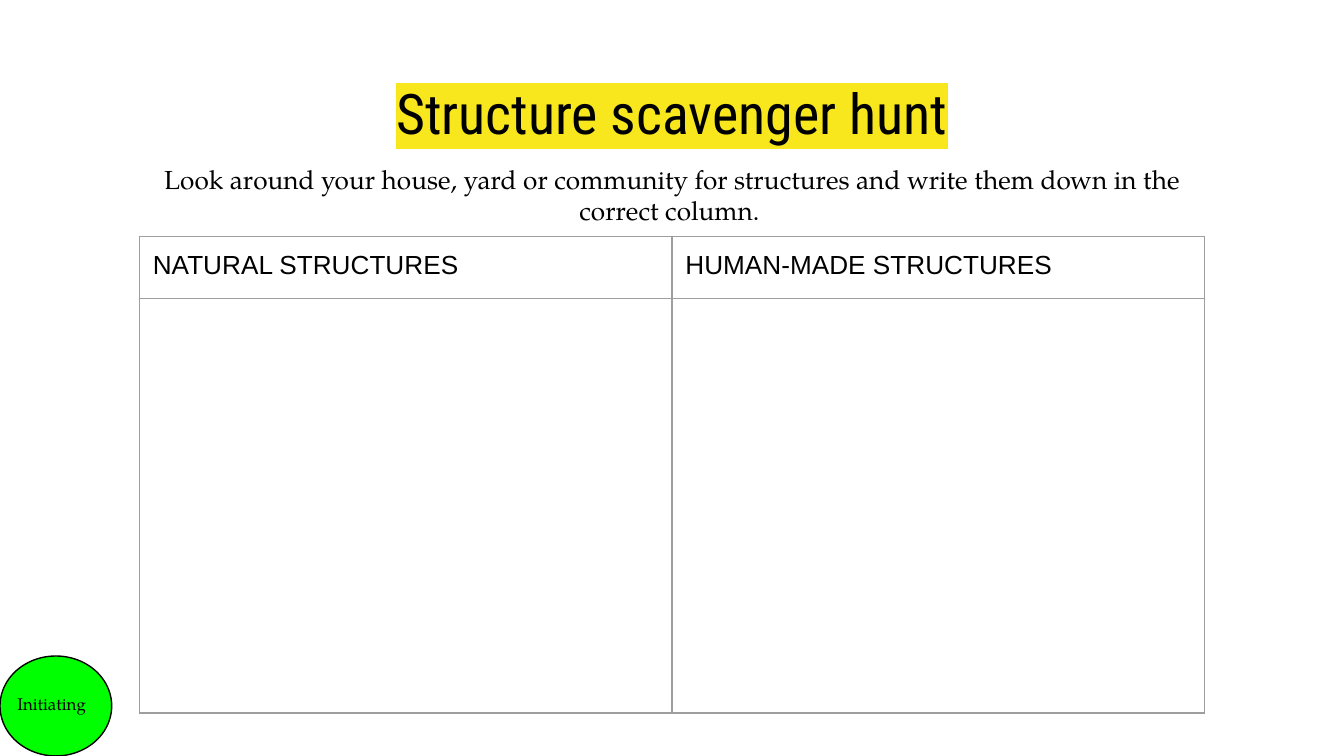
"""Build the structure scavenger hunt worksheet slide."""
from dataclasses import dataclass

from lxml.etree import SubElement
from pptx import Presentation
from pptx.dml.color import RGBColor
from pptx.enum.shapes import MSO_SHAPE as Shape
from pptx.enum.text import MSO_ANCHOR as Anchor, PP_ALIGN as Align
from pptx.oxml.ns import qn
from pptx.util import Pt

PX = 5715
SLIDE_W, SLIDE_H = 1600, 900
INSET = 16
BLACK = RGBColor(0x00, 0x00, 0x00)
GREEN = RGBColor(0x00, 0xFF, 0x00)
GREY = RGBColor(0x9E, 0x9E, 0x9E)
YELLOW = RGBColor(0xF8, 0xE7, 0x1C)
SERIF = "TeX Gyre Pagella"
HEADERS = ("NATURAL STRUCTURES", "HUMAN-MADE STRUCTURES")
ROW_HEIGHTS = (73, 494)


@dataclass(frozen=True)
class Box:
    x: int
    y: int
    w: int
    h: int

    def emu(self) -> tuple[int, ...]:
        return tuple(v * PX for v in (self.x, self.y, self.w, self.h))


@dataclass(frozen=True)
class Label:
    box: Box
    text: str
    size: int
    font: str = SERIF
    align: Align = Align.CENTER


TITLE = Label(Box(54, 78, 1492, 101), "Structure scavenger hunt", 30, "Roboto Condensed")
TABLE = Box(166, 282, 1268, sum(ROW_HEIGHTS))
TASK = Label(
    Box(160, 178, 1282, 104),
    "Look around your house, yard or community for structures "
    "and write them down in the correct column. ",
    14,
)
BADGE = Box(0, 781, 133, 119)
STAGE = Label(Box(0, 814, 133, 48), " Initiating ", 9, align=Align.LEFT)


def write(tf, text: str, size: int, font: str, align: Align) -> None:
    tf.text = text
    p = tf.paragraphs[0]
    p.alignment = align
    for r in p.runs:
        r.font.size, r.font.name, r.font.bold = Pt(size), font, False
        r.font.color.rgb = BLACK


def fill_label(sp, label: Label) -> None:
    sp.left, sp.top, sp.width, sp.height = label.box.emu()
    tf = sp.text_frame
    tf.word_wrap = True
    tf.vertical_anchor = Anchor.TOP
    tf.margin_left = tf.margin_right = tf.margin_top = tf.margin_bottom = INSET * PX
    write(tf, label.text, label.size, label.font, label.align)


def add_label(s, label: Label) -> None:
    fill_label(s.shapes.add_textbox(*label.box.emu()), label)


def highlight(r, color: RGBColor) -> None:
    rpr = r.font._element
    mark = SubElement(rpr, qn("a:highlight"))
    SubElement(mark, qn("a:srgbClr"), val=str(color))
    rpr.find(qn("a:latin")).addprevious(mark)


def format_cell(cell, text: str) -> None:
    cell.margin_left = cell.margin_right = INSET * PX
    cell.margin_top = cell.margin_bottom = INSET * PX
    if text:
        write(cell.text_frame, text, 14, "Arial", Align.LEFT)
    tcpr = cell._tc.get_or_add_tcPr()
    for side in ("lnL", "lnR", "lnT", "lnB"):
        ln = SubElement(tcpr, qn(f"a:{side}"), w=str(Pt(0.75)))
        SubElement(SubElement(ln, qn("a:solidFill")), qn("a:srgbClr"), val=str(GREY))
    cell.fill.background()


def add_columns_table(s) -> None:
    table = s.shapes.add_table(len(ROW_HEIGHTS), len(HEADERS), *TABLE.emu()).table
    table.first_row = table.horz_banding = False
    for row, height in zip(table.rows, ROW_HEIGHTS):
        row.height = height * PX
    for col, header in enumerate(HEADERS):
        table.columns[col].width = TABLE.w * PX // len(HEADERS)
        format_cell(table.cell(0, col), header)
        format_cell(table.cell(1, col), "")


def add_badge(s) -> None:
    sp = s.shapes.add_shape(Shape.OVAL, *BADGE.emu())
    sp.shadow.inherit = False
    sp.fill.solid()
    sp.fill.fore_color.rgb = GREEN
    sp.line.color.rgb = BLACK
    sp.line.width = Pt(0.75)


def main() -> None:
    prs = Presentation()
    prs.slide_width, prs.slide_height = SLIDE_W * PX, SLIDE_H * PX
    s = prs.slides.add_slide(prs.slide_layouts[5])
    title = s.shapes.title
    fill_label(title, TITLE)
    highlight(title.text_frame.paragraphs[0].runs[0], YELLOW)
    add_columns_table(s)
    add_label(s, TASK)
    add_badge(s)
    add_label(s, STAGE)
    prs.save("out.pptx")


if __name__ == "__main__":
    main()
